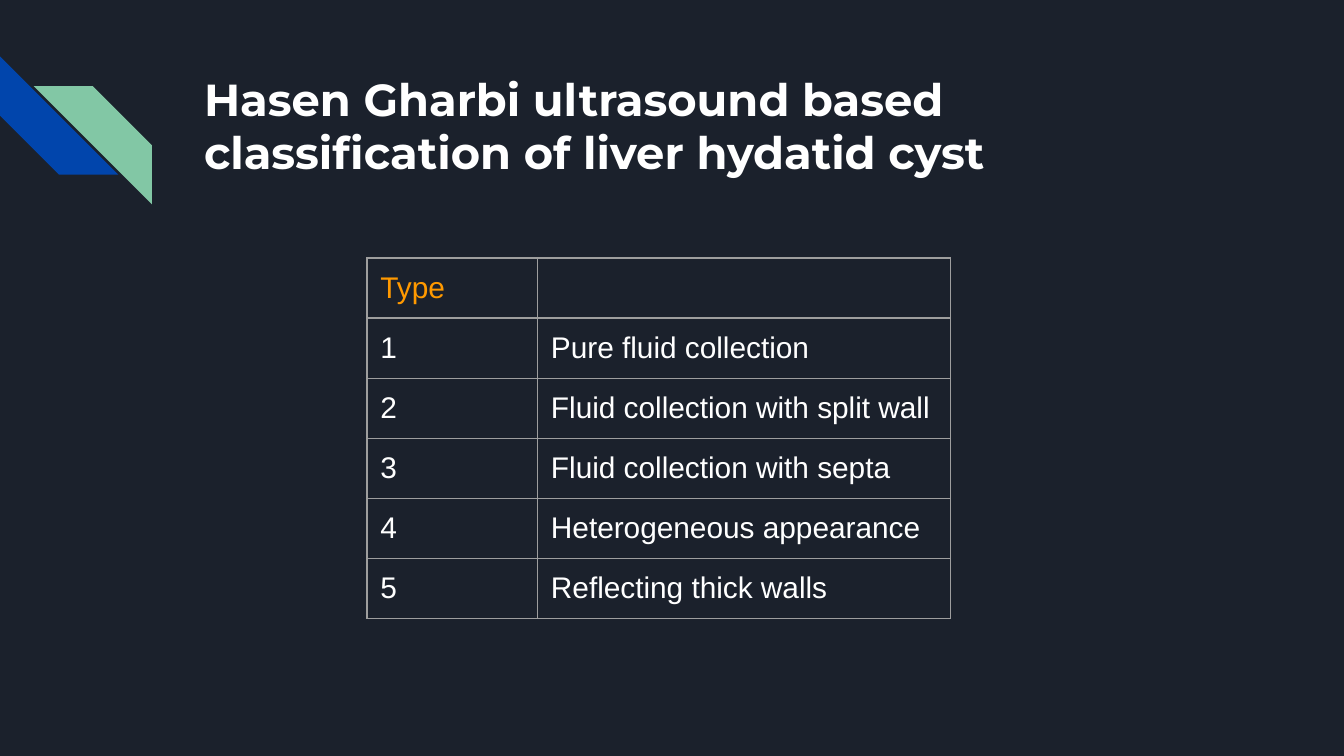
from pptx import Presentation, oxml, util as u
from pptx.dml.color import RGBColor
from pptx.enum import shapes, text
from pptx.oxml import ns

TITLE = "Hasen Gharbi ultrasound based classification of liver hydatid cyst"
ROWS = [
    ("Type", ""),
    ("1", "Pure fluid collection"),
    ("2", "Fluid collection with split wall"),
    ("3", "Fluid collection with septa"),
    ("4", "Heterogeneous appearance"),
    ("5", "Reflecting thick walls"),
]
THEME = {
    "back": "1B212C", "blue": "0145AC", "green": "82C7A5",
    "text": "FFFFFF", "head": "FF9900", "rule": "9E9E9E",
    "title": ("Montserrat", 24), "body": ("Arial", 16), "line": 0.75,
}
WIDE = 10
HIGH = WIDE * 9 / 16
COLS, ROW = (1.27, 3.07), 0.42
PAD, FOOT, SIDE = 0.1, 0.08, 0.88
STRIPES = [
    (0, 0.42, "blue", 270, False),
    (0.25, 0.64, "green", 0, True),
]


def tint(name):
    return RGBColor.from_string(THEME[name])


def box(*size):
    return [u.Inches(n) for n in size]


def style(font, kind, color, bold=False):
    font.name, size = THEME[kind]
    font.size = u.Pt(size)
    font.bold = bold
    font.color.rgb = tint(color)


def pad(item, foot=PAD):
    item.margin_left = item.margin_right = item.margin_top = u.Inches(PAD)
    item.margin_bottom = u.Inches(foot)


def rule(cell):
    props = cell._tc.get_or_add_tcPr()
    for side in "LRTB":
        props.append(oxml.parse_xml(
            f'<a:ln{side} {ns.nsdecls("a")} w="{u.Pt(THEME["line"])}">'
            f'<a:solidFill><a:srgbClr val="{THEME["rule"]}"/></a:solidFill>'
            f'</a:ln{side}>'))


def add_stripe(slide, left, top, color, turn, flip):
    part = slide.shapes.add_shape(
        shapes.MSO_SHAPE.DIAGONAL_STRIPE, *box(left, top, SIDE, SIDE))
    part.adjustments[0] = 0.5
    part.rotation = turn
    part.shadow.inherit = False
    part.fill.solid()
    part.fill.fore_color.rgb = tint(color)
    part.line.fill.background()
    if flip:
        part._element.spPr.xfrm.set("flipH", "1")


def add_title(slide):
    frame = slide.shapes.add_textbox(*box(1.42, 0.43, 7.7, 1)).text_frame
    frame.word_wrap = True
    frame.vertical_anchor = text.MSO_ANCHOR.MIDDLE
    pad(frame)
    frame.text = TITLE
    style(frame.paragraphs[0].font, "title", "text", True)


def add_grid(slide):
    grid = slide.shapes.add_table(
        len(ROWS), len(COLS),
        *box(2.73, 1.92, sum(COLS), ROW * len(ROWS))).table
    grid.first_row = grid.horz_banding = False
    for col, width in zip(grid.columns, COLS):
        col.width = u.Inches(width)
    for r, row in enumerate(ROWS):
        grid.rows[r].height = u.Inches(ROW)
        for c, words in enumerate(row):
            cell = grid.cell(r, c)
            pad(cell, FOOT)
            rule(cell)
            cell.fill.background()
            cell.text = words
            style(cell.text_frame.paragraphs[0].font, "body",
                  "text" if r else "head")


def main():
    deck = Presentation()
    deck.slide_width, deck.slide_height = box(WIDE, HIGH)
    slide = deck.slides.add_slide(deck.slide_layouts[6])
    slide.background.fill.solid()
    slide.background.fill.fore_color.rgb = tint("back")
    for stripe in STRIPES:
        add_stripe(slide, *stripe)
    add_title(slide)
    add_grid(slide)
    deck.save("out.pptx")


if __name__ == "__main__":
    main()
